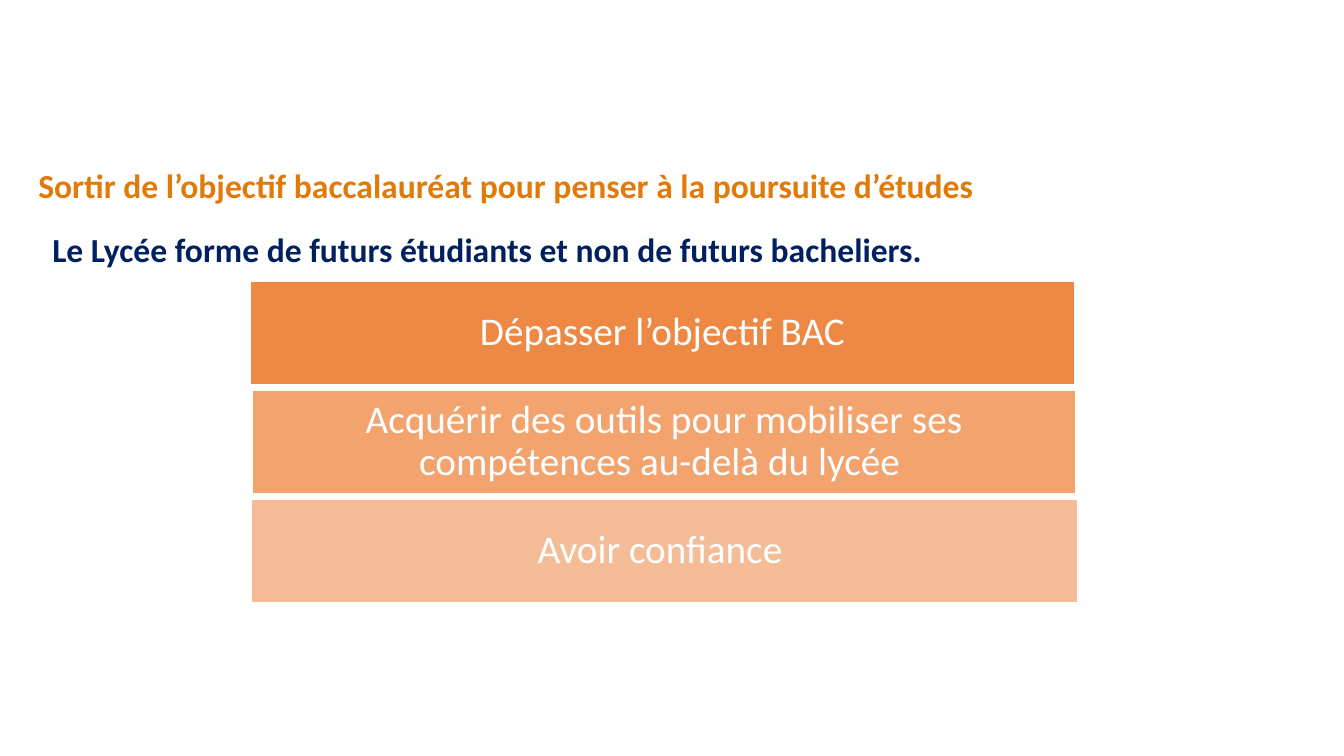
import pptx
import pptx.util
import pptx.dml.color
import pptx.enum.shapes
import pptx.enum.text
import pptx.oxml
import pptx.oxml.ns
from pptx.util import Inches

# Content
HEADING = "Sortir de l’objectif baccalauréat pour penser à la poursuite d’études"
STATEMENT = "Le Lycée forme de futurs étudiants et non de futurs bacheliers."
# Text, left, width, opacity in percent
GOALS = [
    ("Dépasser l’objectif BAC", 2.48, 8.18, 90),
    ("Acquérir des outils pour mobiliser ses compétences au-delà du lycée ", 2.5, 8.17, 70),
    ("Avoir confiance ", 2.49, 8.2, 50),
]
GOAL_TOP, GOAL_HEIGHT, GOAL_STEP = 2.79, 1.03, 1.08

THEME = {
    "font": "Calibri",
    "heading": "E17A09",
    "statement": "002060",
    "goal_fill": "ED7D31",
    "white": "FFFFFF",
    "heading_size": 24,
    "goal_size": 28,
}
ALIGN = pptx.enum.text.PP_ALIGN
ANCHOR = pptx.enum.text.MSO_ANCHOR
FIT = pptx.enum.text.MSO_AUTO_SIZE


def color(name):
    return pptx.dml.color.RGBColor.from_string(THEME[name])


def set_attributes(target, values):
    for name, value in values.items():
        setattr(target, name, value)


def place(shape, left, top, width, height):
    set_attributes(shape, {
        "left": Inches(left), "top": Inches(top),
        "width": Inches(width), "height": Inches(height),
    })


def write(shape, text, color_name, size, bold, frame_format, paragraph_format):
    set_attributes(shape.text_frame, frame_format)
    paragraph = shape.text_frame.paragraphs[0]
    set_attributes(paragraph, paragraph_format)
    run = paragraph.add_run()
    run.text = text
    set_attributes(run.font, {
        "name": THEME["font"], "size": pptx.util.Pt(THEME[size]), "bold": bold,
    })
    run.font.color.rgb = color(color_name)


def add_goal(slide, row, text, left, width, opacity):
    shape = slide.shapes.add_shape(pptx.enum.shapes.MSO_SHAPE.RECTANGLE, 0, 0, 0, 0)
    place(shape, left, GOAL_TOP + row * GOAL_STEP, width, GOAL_HEIGHT)
    shape.shadow.inherit = False
    shape.fill.solid()
    shape.fill.fore_color.rgb = color("goal_fill")
    fill_color = shape._element.spPr.find(".//" + pptx.oxml.ns.qn("a:srgbClr"))
    fill_color.append(pptx.oxml.parse_xml(
        f'<a:alpha {pptx.oxml.ns.nsdecls("a")} val="{opacity * 1000}"/>'))
    shape.line.color.rgb = color("white")
    shape.line.width = pptx.util.Pt(1)
    margins = {f"margin_{side}": Inches(0.08) for side in ("left", "top", "right", "bottom")}
    write(shape, text, "white", "goal_size", False,
          {"word_wrap": True, "vertical_anchor": ANCHOR.MIDDLE, **margins},
          {"alignment": ALIGN.CENTER, "line_spacing": 0.9})


def main():
    presentation = pptx.Presentation()
    presentation.slide_width = Inches(13.33)
    presentation.slide_height = Inches(7.5)
    slide = presentation.slides.add_slide(presentation.slide_layouts.get_by_name("Title Only"))

    # Heading
    title = slide.shapes.title
    place(title, 0.28, 1.59, 9.57, 0.5)
    write(title, HEADING, "heading", "heading_size", True,
          {"word_wrap": False, "vertical_anchor": ANCHOR.TOP, "auto_size": FIT.SHAPE_TO_FIT_TEXT},
          {"alignment": ALIGN.LEFT})

    # Statement
    statement = slide.shapes.add_textbox(0, 0, 0, 0)
    place(statement, 0.42, 2.22, 9.55, 0.5)
    write(statement, STATEMENT, "statement", "heading_size", True,
          {"word_wrap": True, "auto_size": FIT.SHAPE_TO_FIT_TEXT},
          {"alignment": ALIGN.JUSTIFY})

    # Stacked goals, fading downwards
    for row, goal in enumerate(GOALS):
        add_goal(slide, row, *goal)

    presentation.save("out.pptx")


if __name__ == "__main__":
    main()
